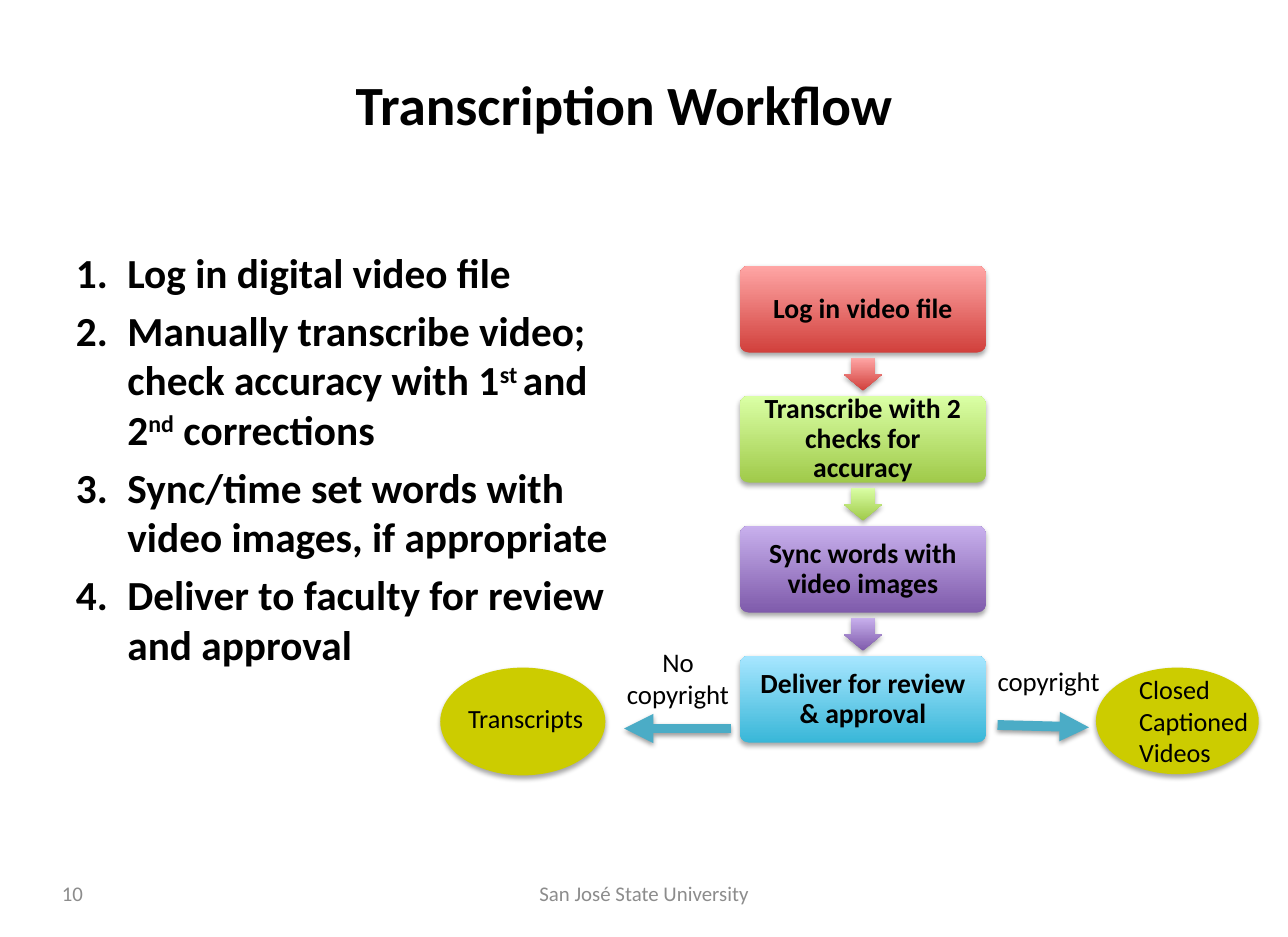
from dataclasses import dataclass

from lxml import etree
from pptx import Presentation
from pptx import util as u
from pptx.dml.color import RGBColor
from pptx.enum import shapes, text
from pptx.oxml import ns

FONT = "Calibri"
BLACK = RGBColor(0x00, 0x00, 0x00)
GRAY = RGBColor(0x8C, 0x8C, 0x8C)
OLIVE = RGBColor(0xCC, 0xCC, 0x00)
TEAL = RGBColor(0x4B, 0xAC, 0xC6)

RED, PINK = RGBColor(0xD1, 0x40, 0x3C), RGBColor(0xFF, 0xA6, 0xA5)
GREEN, LIME = RGBColor(0xA0, 0xCA, 0x4A), RGBColor(0xDA, 0xFF, 0xA5)
PURPLE, LILAC = RGBColor(0x7F, 0x5B, 0xAB), RGBColor(0xC8, 0xB0, 0xED)
BLUE, SKY = RGBColor(0x39, 0xB7, 0xD8), RGBColor(0xA7, 0xE6, 0xFF)

LEFT, CENTER, RIGHT = text.PP_ALIGN.LEFT, text.PP_ALIGN.CENTER, text.PP_ALIGN.RIGHT
TOP, MIDDLE = text.MSO_ANCHOR.TOP, text.MSO_ANCHOR.MIDDLE
Box = tuple[float, float, float, float]


@dataclass
class Step:
    label: str
    dark: RGBColor
    light: RGBColor


@dataclass
class Outcome:
    label: str
    ellipse: Box
    label_box: Box
    condition: str
    condition_box: Box
    condition_align: text.PP_ALIGN
    arrow: Box  # x and y of the left end, then of the right end
    arrowhead: str


STEPS = [
    Step("Log in video file", RED, PINK),
    Step("Transcribe with 2 checks for accuracy", GREEN, LIME),
    Step("Sync words with video images", PURPLE, LILAC),
    Step("Deliver for review & approval", BLUE, SKY),
]
STEP_LEFT, STEP_TOP, STEP_PITCH = 6.32, 2.27, 1.11
STEP_WIDTH, STEP_HEIGHT = 2.1, 0.74

OUTCOMES = [
    Outcome("Closed Captioned Videos", (9.36, 5.7, 1.39, 0.91), (9.63, 5.7, 1.18, 0.91),
            "copyright", (8.25, 5.63, 1.22, 0.36), RIGHT, (8.52, 6.19, 9.3, 6.21), "tailEnd"),
    Outcome("Transcripts", (3.76, 5.7, 1.41, 0.92), (3.9, 5.95, 1.23, 0.37),
            "No copyright", (5.18, 5.61, 1.22, 0.36), CENTER, (5.33, 6.22, 6.24, 6.22), "headEnd"),
]

# Text between carets is superscript
INSTRUCTIONS = [
    "Log in digital video file",
    "Manually transcribe video; check accuracy with 1^st ^and 2^nd^ corrections",
    "Sync/time set words with video images, if appropriate",
    "Deliver to faculty for review and approval",
]


def add_shadow(sp, alpha: int = 35, distance: float = 1.8) -> None:
    effects = etree.SubElement(sp._element.spPr, ns.qn("a:effectLst"))
    shadow = etree.SubElement(effects, ns.qn("a:outerShdw"), blurRad=str(u.Pt(3.1)),
                              dist=str(u.Pt(distance)), dir="5400000", rotWithShape="0")
    color = etree.SubElement(shadow, ns.qn("a:srgbClr"), val="000000")
    etree.SubElement(color, ns.qn("a:alpha"), val=str(alpha * 1000))


def write_text(sp, *paragraphs: str, size: float, bold: bool = False, color: RGBColor = BLACK,
               align: text.PP_ALIGN = LEFT, anchor: text.MSO_ANCHOR = TOP,
               inset: tuple[float, float] = (0.1, 0.05), numbered: bool = False,
               space_before: float = 0, line_spacing: float = 1.0) -> None:
    tf = sp.text_frame
    tf.word_wrap = True
    tf.vertical_anchor = anchor
    tf.margin_left = tf.margin_right = u.Inches(inset[0])
    tf.margin_top = tf.margin_bottom = u.Inches(inset[1])
    for i, paragraph in enumerate(paragraphs):
        p = tf.add_paragraph() if i else tf.paragraphs[0]
        p.alignment = align
        p.line_spacing = line_spacing
        p.space_before = u.Pt(space_before if i else 0)
        if numbered:
            pPr = p._p.get_or_add_pPr()
            pPr.set("marL", str(u.Inches(0.44)))
            pPr.set("indent", str(-u.Inches(0.44)))
            etree.SubElement(pPr, ns.qn("a:buFont"), typeface="+mj-lt")
            etree.SubElement(pPr, ns.qn("a:buAutoNum"), type="arabicPeriod")
        for j, part in enumerate(paragraph.split("^")):
            r = p.add_run()
            r.text = part
            r.font.name, r.font.size, r.font.bold = FONT, u.Pt(size), bold
            r.font.color.rgb = color
            if j % 2:
                r.font._element.set("baseline", "30000")


def add_text(s, box: Box, *paragraphs: str, **style) -> None:
    write_text(s.shapes.add_textbox(*map(u.Inches, box)), *paragraphs, **style)


def add_shape(s, kind: shapes.MSO_SHAPE, box: Box, dark: RGBColor,
              light: RGBColor | None = None):
    sp = s.shapes.add_shape(kind, *map(u.Inches, box))
    sp.line.fill.background()
    if light is None:
        sp.fill.solid()
        sp.fill.fore_color.rgb = dark
    else:
        sp.fill.gradient()
        sp.fill.gradient_angle = 90
        for stop, color in zip(sp.fill.gradient_stops, (dark, light)):
            stop.color.rgb = color
        sp._element.spPr.find(ns.qn("a:gradFill")).set("rotWithShape", "0")
    add_shadow(sp)
    return sp


def add_step(s, index: int, step: Step) -> None:
    top = STEP_TOP + index * STEP_PITCH
    sp = add_shape(s, shapes.MSO_SHAPE.ROUNDED_RECTANGLE,
                   (STEP_LEFT, top, STEP_WIDTH, STEP_HEIGHT), step.dark, step.light)
    sp.adjustments[0] = 0.1
    write_text(sp, step.label, size=17, bold=True, align=CENTER, anchor=MIDDLE,
               inset=(0.09, 0.09), line_spacing=0.9)
    if index < len(STEPS) - 1:
        arrow = add_shape(s, shapes.MSO_SHAPE.RIGHT_ARROW,
                          (7.23, top + 0.76, 0.28, 0.33), step.dark, step.light)
        arrow.rotation = 90
        arrow.adjustments[0] = 0.6


def add_outcome(s, outcome: Outcome) -> None:
    add_shape(s, shapes.MSO_SHAPE.OVAL, outcome.ellipse, OLIVE)
    add_text(s, outcome.label_box, outcome.label, size=16.1)
    add_text(s, outcome.condition_box, outcome.condition, size=16.5,
             align=outcome.condition_align, anchor=MIDDLE, inset=(0.08, 0.04))
    line = s.shapes.add_connector(shapes.MSO_CONNECTOR.STRAIGHT, *map(u.Inches, outcome.arrow))
    line.line.color.rgb = TEAL
    line.line.width = u.Pt(6)
    etree.SubElement(line.line._get_or_add_ln(), ns.qn(f"a:{outcome.arrowhead}"), type="triangle")
    add_shadow(line, alpha=38, distance=1.6)


def main() -> None:
    prs = Presentation()
    prs.slide_width, prs.slide_height = u.Inches(11), u.Inches(8)
    s = prs.slides.add_slide(prs.slide_layouts[6])

    # Title and numbered instructions
    add_text(s, (0.38, 0.37, 9.9, 1.03), "Transcription Workflow",
             size=34, bold=True, align=CENTER, anchor=MIDDLE)
    add_text(s, (0.55, 2.06, 4.94, 3.64), *INSTRUCTIONS,
             size=25.4, bold=True, numbered=True, space_before=5.1)

    # Workflow and its two outcomes
    for index, step in enumerate(STEPS):
        add_step(s, index, step)
    for outcome in OUTCOMES:
        add_outcome(s, outcome)

    # Footer
    footer = dict(size=12.8, color=GRAY, anchor=MIDDLE)
    add_text(s, (3.76, 7.41, 3.48, 0.43), "San José State University", align=CENTER, **footer)
    add_text(s, (0.43, 7.41, 2.57, 0.43), "10", **footer)

    prs.save("out.pptx")


if __name__ == "__main__":
    main()
